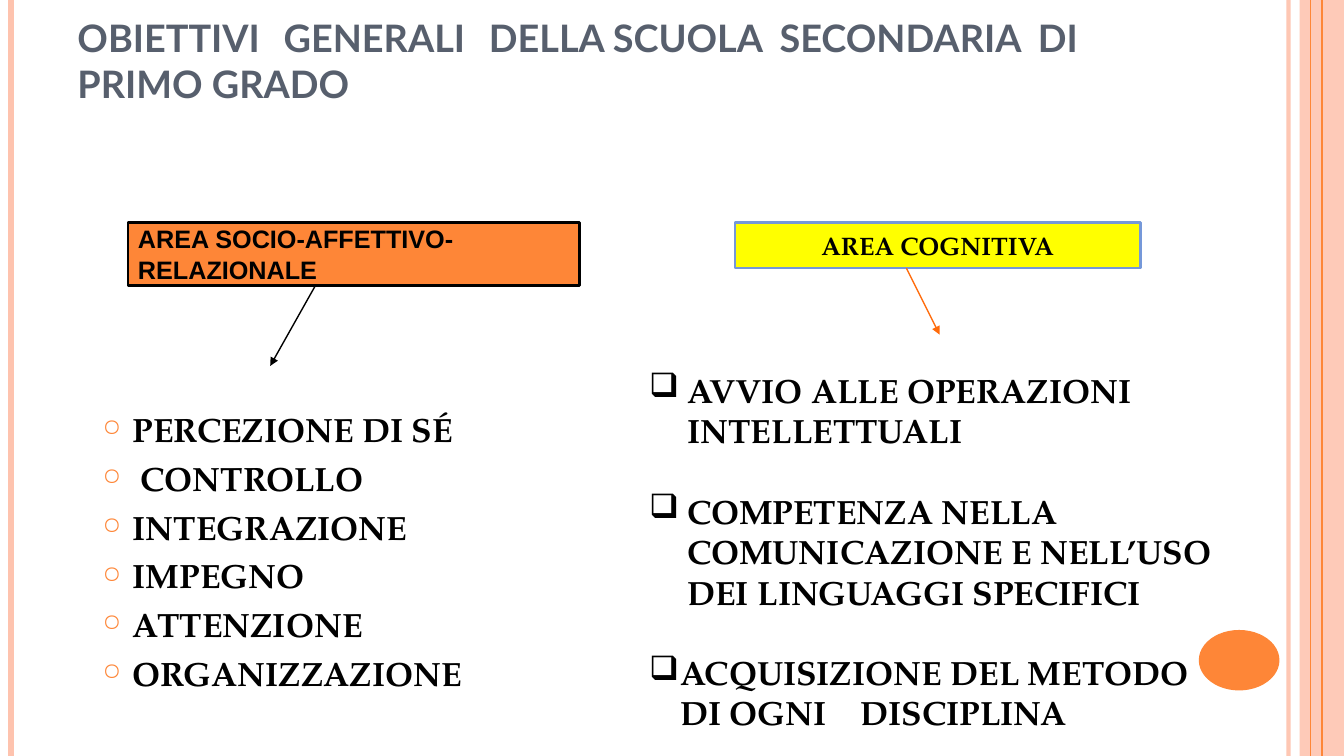
from dataclasses import dataclass

from lxml.etree import SubElement
from pptx import Presentation
from pptx.dml.color import RGBColor
from pptx.enum.shapes import MSO_CONNECTOR as Link, MSO_SHAPE as Form
from pptx.enum.text import MSO_ANCHOR as Anchor, PP_ALIGN as Align
from pptx.oxml.ns import qn
from pptx.util import Pt

PX = 9144  # 100 px to the inch


@dataclass(frozen=True)
class Theme:
    orange: str = "FE8637"
    peach: str = "FEC3AE"
    arrow: str = "FF6B0A"
    yellow: str = "FFFF00"
    blue: str = "7598D9"
    slate: str = "575F6D"
    black: str = "000000"
    head: str = "Lato"
    sans: str = "Arial"
    serif: str = "TeX Gyre Pagella"
    title: int = 27
    label: int = 18
    body: int = 24


@dataclass(frozen=True)
class Rect:
    x: int
    y: int
    w: int
    h: int

    def emu(self) -> tuple[int, ...]:
        return tuple(v * PX for v in (self.x, self.y, self.w, self.h))


@dataclass(frozen=True)
class Line:
    start: tuple[int, int]
    end: tuple[int, int]
    color: str
    width: float
    alpha: int = 100
    arrow: bool = False


@dataclass(frozen=True)
class Area:
    box: Rect
    text: str
    font: str
    fill: str
    edge: str
    align: Align


@dataclass(frozen=True)
class Item:
    text: str
    indent: int
    hang: int
    gap: float = 0


@dataclass(frozen=True)
class Group:
    box: Rect
    mark: str
    color: str
    scale: int
    after: float
    items: tuple[Item, ...]


T = Theme()
RAILS = (
    Line((1278, 0), (1278, 750), T.peach, 3, alpha=93),
    Line((11, 0), (11, 750), T.peach, 4.5),
    Line((1311, 0), (1311, 750), T.orange, 1.5),
    Line((1300, 0), (1300, 750), T.orange, 0.75),
)
ARROWS = (
    Line((313, 283), (268, 363), T.black, 1, arrow=True),
    Line((899, 266), (932, 332), T.arrow, 1, arrow=True),
)
AREAS = (
    Area(Rect(127, 221, 448, 62), "AREA SOCIO-AFFETTIVO-RELAZIONALE",
         T.sans, T.orange, T.black, Align.LEFT),
    Area(Rect(729, 221, 402, 45), "AREA COGNITIVA",
         T.serif, T.yellow, T.blue, Align.CENTER),
)
GROUPS = (
    Group(Rect(92, 401, 500, 304), "○", T.orange, 70, 6, (
        Item("PERCEZIONE DI SÉ", 30, 30),
        Item("CONTROLLO", 38, 38),
        Item("INTEGRAZIONE", 30, 30),
        Item("IMPEGNO", 30, 30),
        Item("ATTENZIONE", 30, 30),
        Item("ORGANIZZAZIONE", 30, 30),
    )),
    Group(Rect(634, 362, 594, 380), "❑", T.black, 100, 28.8, (
        Item("AVVIO ALLE OPERAZIONI INTELLETTUALI", 38, 38),
        Item("COMPETENZA NELLA COMUNICAZIONE E NELL’USO DEI LINGUAGGI SPECIFICI", 38, 38),
        Item("ACQUISIZIONE DEL METODO DI OGNI_DISCIPLINA", 31, 31, gap=18),
    )),
)
TITLE = "OBIETTIVI_GENERALI_DELLA SCUOLA_SECONDARIA_DI PRIMO GRADO"
GAPS = (10.4, 10.4, 5.2, 5.2)


def rgb(color: str) -> RGBColor:
    return RGBColor.from_string(color)


def fade(node, alpha: int) -> None:
    """Make the solid colour below node partly transparent."""
    if alpha < 100:
        tint = next(node.iter(qn("a:srgbClr")))
        SubElement(tint, qn("a:alpha"), val=str(alpha * 1000))


def style(font, face: str, size: int, color: str) -> None:
    font.name, font.size, font.bold = face, Pt(size), True
    font.color.rgb = rgb(color)


def write(par, text: str, face: str, size: int, color: str, gaps=()) -> None:
    """Fill a paragraph; each underscore becomes a space widened by its gap in points."""
    first, *rest = text.split("_")
    par.text = first
    for gap, part in zip(gaps, rest):
        space = par.add_run()
        space.text = " "
        space.font._element.set("spc", str(round(gap * 100)))
        par.add_run().text = part
    for run in par.runs:
        style(run.font, face, size, color)


def draw_line(slide, line: Line) -> None:
    ends = [v * PX for v in (*line.start, *line.end)]
    link = slide.shapes.add_connector(Link.STRAIGHT, *ends)
    link.line.color.rgb = rgb(line.color)
    link.line.width = Pt(line.width)
    props = link._element.spPr
    fade(props, line.alpha)
    if line.arrow:
        SubElement(link.line._get_or_add_ln(), qn("a:tailEnd"), type="triangle")
    SubElement(props, qn("a:effectLst"))


def draw_shape(slide, form: Form, box: Rect, fill: str, alpha: int = 100):
    shape = slide.shapes.add_shape(form, *box.emu())
    shape.shadow.inherit = False
    shape.fill.solid()
    shape.fill.fore_color.rgb = rgb(fill)
    fade(shape._element.spPr, alpha)
    shape.line.fill.background()
    return shape


def draw_area(slide, area: Area) -> None:
    shape = draw_shape(slide, Form.RECTANGLE, area.box, area.fill)
    shape.line.color.rgb = rgb(area.edge)
    shape.line.width = Pt(2)
    frame = shape.text_frame
    frame.word_wrap, frame.vertical_anchor = True, Anchor.MIDDLE
    par = frame.paragraphs[0]
    write(par, area.text, area.font, T.label, T.black)
    par.alignment = area.align


def add_text(slide, box: Rect):
    frame = slide.shapes.add_textbox(*box.emu()).text_frame
    frame.word_wrap = True
    return frame


def bullet(par, group: Group, item: Item) -> None:
    props = par._p.get_or_add_pPr()
    props.set("marL", str(item.indent * PX))
    props.set("indent", str(-item.hang * PX))
    tint = SubElement(props, qn("a:buClr"))
    SubElement(tint, qn("a:srgbClr"), val=group.color)
    SubElement(props, qn("a:buSzPct"), val=str(group.scale * 1000))
    SubElement(props, qn("a:buChar"), char=group.mark)


def draw_group(slide, group: Group) -> None:
    frame = add_text(slide, group.box)
    for i, item in enumerate(group.items):
        par = frame.add_paragraph() if i else frame.paragraphs[0]
        write(par, item.text, T.serif, T.body, T.black, (item.gap,))
        par.space_after = Pt(group.after)
        bullet(par, group, item)


def main() -> None:
    deck = Presentation()
    deck.slide_width, deck.slide_height = 1333 * PX, 750 * PX
    slide = deck.slides.add_slide(deck.slide_layouts[6])
    draw_shape(slide, Form.RECTANGLE, Rect(1289, 0, 44, 750), T.peach, alpha=87)
    for rail in RAILS:
        draw_line(slide, rail)
    draw_shape(slide, Form.OVAL, Rect(1189, 625, 80, 60), T.orange)
    title = add_text(slide, Rect(67, 10, 1089, 100))
    write(title.paragraphs[0], TITLE, T.head, T.title, T.slate, GAPS)
    for area in AREAS:
        draw_area(slide, area)
    for arrow in ARROWS:
        draw_line(slide, arrow)
    for group in GROUPS:
        draw_group(slide, group)
    deck.save("out.pptx")


if __name__ == "__main__":
    main()
